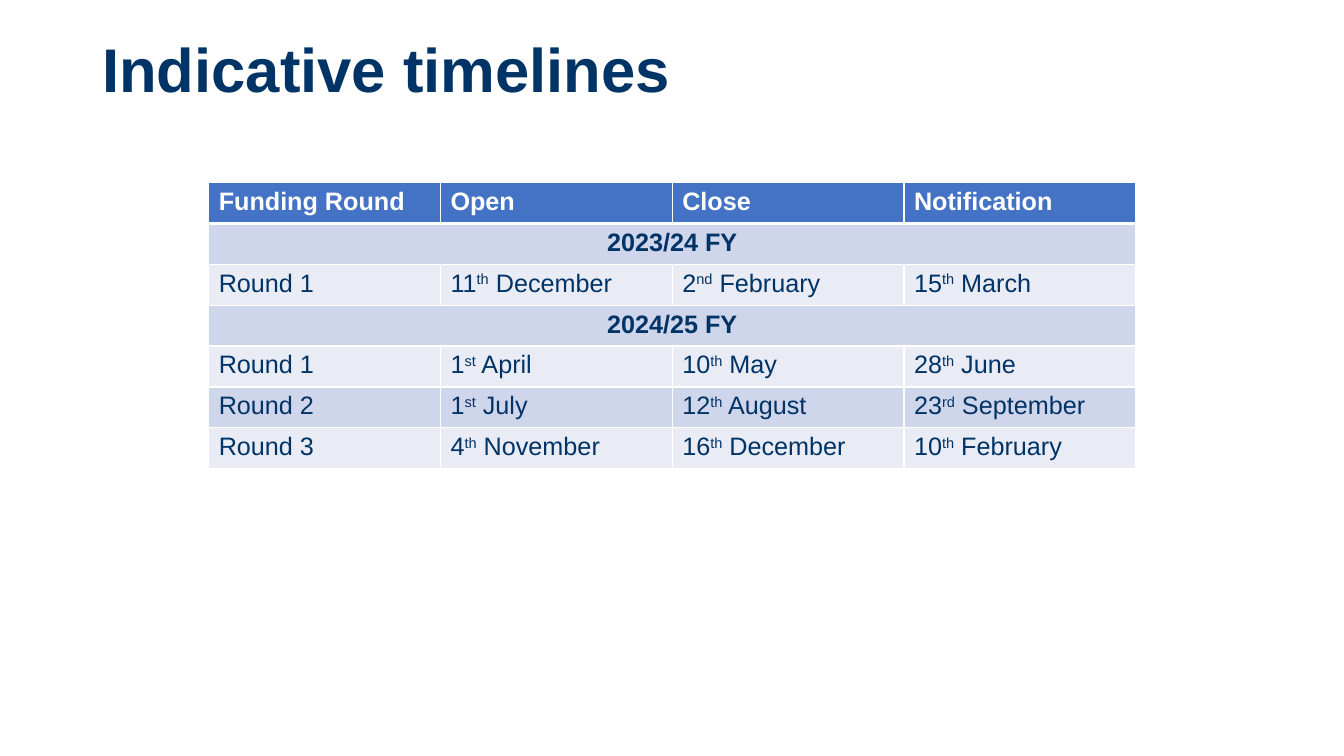
from lxml import etree
from pptx import Presentation
from pptx.dml.color import RGBColor
from pptx.enum.text import MSO_ANCHOR, PP_ALIGN
from pptx.oxml.ns import qn
from pptx.util import Cm, Pt

LEFT, CENTER = PP_ALIGN.LEFT, PP_ALIGN.CENTER
MIDDLE = MSO_ANCHOR.MIDDLE

NAVY = RGBColor(0x00, 0x33, 0x66)
WHITE = RGBColor(0xFF, 0xFF, 0xFF)
HEADER_BLUE = RGBColor(0x44, 0x72, 0xC4)
BAND_DARK = RGBColor(0xCF, 0xD5, 0xEA)
BAND_LIGHT = RGBColor(0xE9, 0xEB, 0xF5)

COLUMN_WIDTH = Cm(5.84)
ROW_HEIGHT = Cm(1.03)
TITLE_FORMAT = {"name": "Arial", "size": Pt(44), "bold": True}
HEADING_FORMAT = {"name": "Arial", "size": Pt(18), "bold": True}
BODY_FORMAT = {"name": "Arial", "size": Pt(18), "bold": False}

TIMELINE = [
    ["Funding Round", "Open", "Close", "Notification"],
    ["2023/24 FY"],
    ["Round 1", "11^th^ December", "2^nd^ February", "15^th^ March"],
    ["2024/25 FY"],
    ["Round 1", "1^st^ April", "10^th^ May", "28^th^ June"],
    ["Round 2", "1^st^ July", "12^th^ August", "23^rd^ September"],
    ["Round 3", "4^th^ November", "16^th^ December", "10^th^ February"],
]


def write_text(paragraph, text, font_format, color):
    """Write text into a paragraph, raising the parts between carets."""
    for index, part in enumerate(text.split("^")):
        run = paragraph.add_run()
        run.text = part
        for name, value in font_format.items():
            setattr(run.font, name, value)
        run.font.color.rgb = color
        if index % 2:
            run.font._element.set("baseline", "30000")


def add_title(slide, text):
    """Add the slide heading."""
    shape = slide.shapes.add_textbox(Cm(2.33), Cm(0), Cm(27.15), Cm(3.68))
    frame = shape.text_frame
    frame.word_wrap = True
    frame.vertical_anchor = MIDDLE
    paragraph = frame.paragraphs[0]
    paragraph.line_spacing = 0.9
    write_text(paragraph, text, TITLE_FORMAT, NAVY)


def set_borders(cell, top, bottom):
    """Draw white borders of the given widths in points around a cell."""
    properties = cell._tc.get_or_add_tcPr()
    widths = {"a:lnL": 1, "a:lnR": 1, "a:lnT": top, "a:lnB": bottom}
    for tag, width in widths.items():
        line = etree.SubElement(properties, qn(tag), w=str(Pt(width)))
        fill = etree.SubElement(line, qn("a:solidFill"))
        etree.SubElement(fill, qn("a:srgbClr"), val=str(WHITE))


def format_cell(cell, row):
    """Give a cell its borders and the fill of its row."""
    set_borders(cell, 3 if row == 1 else 1, 3 if row == 0 else 1)
    cell.fill.solid()
    band = BAND_DARK if row % 2 else BAND_LIGHT
    cell.fill.fore_color.rgb = band if row else HEADER_BLUE


def add_timeline(slide, rows):
    """Add the table of funding rounds, merging rows with a single entry."""
    column_count = len(rows[0])
    table = slide.shapes.add_table(
        len(rows), column_count, Cm(5.26), Cm(4.6),
        COLUMN_WIDTH * column_count, ROW_HEIGHT * len(rows)).table
    for column in table.columns:
        column.width = COLUMN_WIDTH
    for row, entries in enumerate(rows):
        table.rows[row].height = ROW_HEIGHT
        is_year = len(entries) == 1
        for column in range(column_count):
            format_cell(table.cell(row, column), row)
        if is_year:
            table.cell(row, 0).merge(table.cell(row, column_count - 1))
        font_format = HEADING_FORMAT if is_year or row == 0 else BODY_FORMAT
        for column, text in enumerate(entries):
            paragraph = table.cell(row, column).text_frame.paragraphs[0]
            paragraph.alignment = CENTER if is_year else LEFT
            write_text(paragraph, text, font_format, NAVY if row else WHITE)


def main():
    """Build the timelines slide and save it."""
    presentation = Presentation()
    presentation.slide_width = Cm(33.87)
    presentation.slide_height = Cm(19.05)
    slide = presentation.slides.add_slide(presentation.slide_layouts[6])
    add_title(slide, "Indicative timelines")
    add_timeline(slide, TIMELINE)
    presentation.save("out.pptx")


if __name__ == "__main__":
    main()
